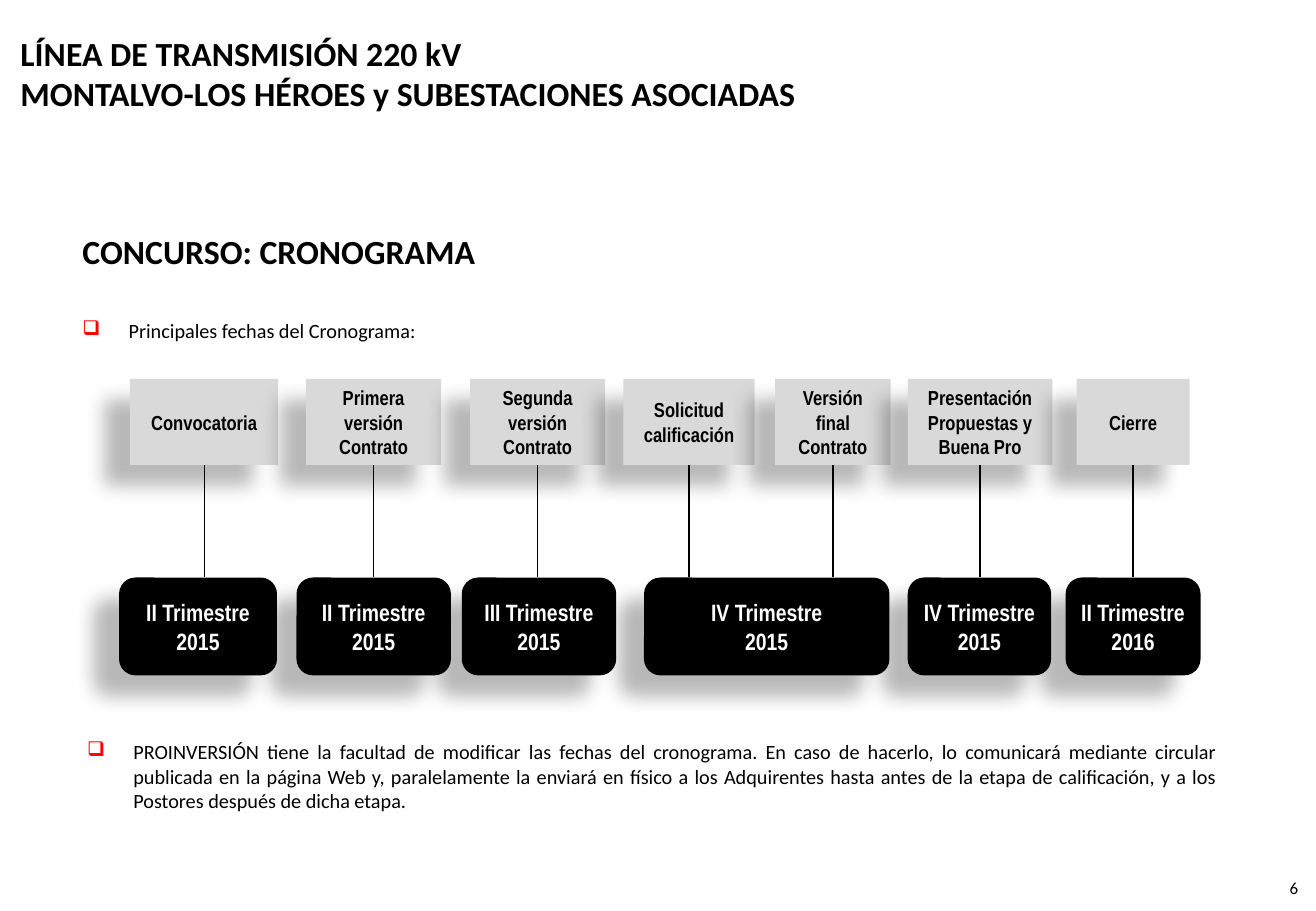
import pptx
import pptx.util
import pptx.dml.color
import pptx.enum.shapes
import pptx.enum.text
import pptx.oxml.ns
from lxml import etree

RGB = pptx.dml.color.RGBColor
BLACK = RGB(0x00, 0x00, 0x00)
WHITE = RGB(0xFF, 0xFF, 0xFF)
GRAY = RGB(0xD9, 0xD9, 0xD9)
RED = RGB(0xFF, 0x00, 0x00)

ALIGN = pptx.enum.text.PP_ALIGN
ANCHOR = pptx.enum.text.MSO_ANCHOR
SHAPE = pptx.enum.shapes.MSO_SHAPE
LINK = pptx.enum.shapes.MSO_CONNECTOR.STRAIGHT

WIDE = pptx.util.Inches(10.83)
HIGH = pptx.util.Inches(7.5)
HANG = pptx.util.Inches(0.38)

# Boxes are left, top, width and height in percent of the slide.
TITLE = (0.65, 1.73, 65, 12.53)
HEAD = (5.36, 23.73, 36.5, 7.73)
INTRO = (5.36, 34.27, 35, 4.13)
CHART = (9.05, 41.6, 82.18, 32.53)
NOTE = (5.72, 80.53, 87.72, 9.47)
PAGE = (94.55, 95.73, 4.99, 4.27)

BIG = dict(name="Calibri", size=pptx.util.Pt(20), bold=True)
BODY = dict(name="Calibri", size=pptx.util.Pt(12), bold=False)
SMALL = dict(name="Calibri", size=pptx.util.Pt(10), bold=False)
STEP = dict(name="Arial Narrow", size=pptx.util.Pt(12), bold=True)
DATE = dict(name="Arial Narrow", size=pptx.util.Pt(14), bold=True)

# Offset from the left of the timeline, width, text
STEPS = [
    (0.83, 11.27, "Convocatoria"),
    (14.22, 10.25, "Primera versión Contrato"),
    (26.68, 10.25, "Segunda versión Contrato"),
    (38.32, 9.97, "Solicitud calificación"),
    (49.86, 8.77, "Versión final Contrato"),
    (59.93, 10.99, "Presentación Propuestas y Buena Pro"),
    (72.76, 8.59, "Cierre"),
]
DATES = [
    (0, 12, "II Trimestre\n2015"),
    (13.48, 11.73, "II Trimestre\n2015"),
    (26.04, 11.73, "III Trimestre\n2015"),
    (39.89, 18.65, "IV Trimestre\n2015"),
    (59.93, 10.9, "IV Trimestre\n2015"),
    (71.93, 10.25, "II Trimestre\n2016"),
]


def scale(x, y, *size):
    """Turn percent of the slide into lengths."""
    sides = (WIDE, HIGH) * 2
    return [int(side * part / 100) for side, part in zip(sides, (x, y, *size))]


def add_mark(para):
    """Give a paragraph a red box bullet and a hanging indent."""
    props = para._p.get_or_add_pPr()
    props.set("marL", str(HANG))
    props.set("indent", str(-HANG))
    color = etree.SubElement(props, pptx.oxml.ns.qn("a:buClr"))
    etree.SubElement(color, pptx.oxml.ns.qn("a:srgbClr"), val=str(RED))
    etree.SubElement(props, pptx.oxml.ns.qn("a:buChar"), char="❑")


def write(shape, text, font, color=BLACK, align=ALIGN.LEFT,
          anchor=ANCHOR.TOP, wrap=True, mark=False):
    frame = shape.text_frame
    frame.word_wrap = wrap
    frame.vertical_anchor = anchor
    frame.text = text
    for para in frame.paragraphs:
        para.alignment = align
        if mark:
            add_mark(para)
        for run in para.runs:
            for key, value in font.items():
                setattr(run.font, key, value)
            run.font.color.rgb = color


def add_text(slide, box, text, font, **style):
    write(slide.shapes.add_textbox(*scale(*box)), text, font, **style)


def add_shade(shape):
    """Cast a soft shadow down and to the left."""
    shape.shadow.inherit = False
    effects = shape._element.spPr.find(pptx.oxml.ns.qn("a:effectLst"))
    shade = etree.SubElement(
        effects, pptx.oxml.ns.qn("a:outerShdw"),
        blurRad=str(pptx.util.Pt(11.8)), dist=str(pptx.util.Pt(19.7)),
        dir=str(141 * 60000), algn="ctr", rotWithShape="0")
    color = etree.SubElement(shade, pptx.oxml.ns.qn("a:srgbClr"), val=str(BLACK))
    etree.SubElement(color, pptx.oxml.ns.qn("a:alpha"), val="28000")


def add_card(slide, box, kind, fill, text, font, **style):
    card = slide.shapes.add_shape(kind, *scale(*box))
    card.fill.solid()
    card.fill.fore_color.rgb = fill
    card.line.fill.background()
    add_shade(card)
    write(card, text, font, align=ALIGN.CENTER, anchor=ANCHOR.MIDDLE, **style)


def add_line(slide, x, top, end):
    line = slide.shapes.add_connector(LINK, *scale(x, top, x, end))
    line.line.color.rgb = BLACK
    line.line.width = pptx.util.Pt(0.75)
    etree.SubElement(line._element.spPr, pptx.oxml.ns.qn("a:effectLst"))


def add_chart(slide, box):
    """Draw the steps on top, their dates below, and lines between."""
    left, top, _, height = box
    tall, deep = height * 0.29, height * 0.33
    base = top + height - deep
    for x, width, _ in STEPS:
        add_line(slide, left + x + width / 2, top + tall, base)
    for x, width, text in STEPS:
        add_card(slide, (left + x, top, width, tall), SHAPE.RECTANGLE,
                 GRAY, text, STEP)
    for x, width, text in DATES:
        add_card(slide, (left + x, base, width, deep), SHAPE.ROUNDED_RECTANGLE,
                 BLACK, text, DATE, color=WHITE, wrap=False)


def main():
    deck = pptx.Presentation()
    deck.slide_width, deck.slide_height = WIDE, HIGH
    slide = deck.slides.add_slide(deck.slide_layouts[6])
    add_text(slide, TITLE, "LÍNEA DE TRANSMISIÓN 220 kV\n"
             "MONTALVO-LOS HÉROES y SUBESTACIONES ASOCIADAS",
             BIG, anchor=ANCHOR.MIDDLE)
    add_text(slide, HEAD, "CONCURSO: CRONOGRAMA", BIG, anchor=ANCHOR.MIDDLE)
    add_text(slide, INTRO, "Principales fechas del Cronograma:", BODY,
             align=ALIGN.JUSTIFY, mark=True)
    add_chart(slide, CHART)
    add_text(slide, NOTE, "PROINVERSIÓN tiene la facultad de modificar las "
             "fechas del cronograma. En caso de hacerlo, lo comunicará "
             "mediante circular publicada en la página Web y, paralelamente "
             "la enviará en físico a los Adquirentes hasta antes de la etapa "
             "de calificación, y a los Postores después de dicha etapa.",
             BODY, align=ALIGN.JUSTIFY, mark=True)
    add_text(slide, PAGE, "6", SMALL, align=ALIGN.RIGHT)
    deck.save("out.pptx")


if __name__ == "__main__":
    main()
